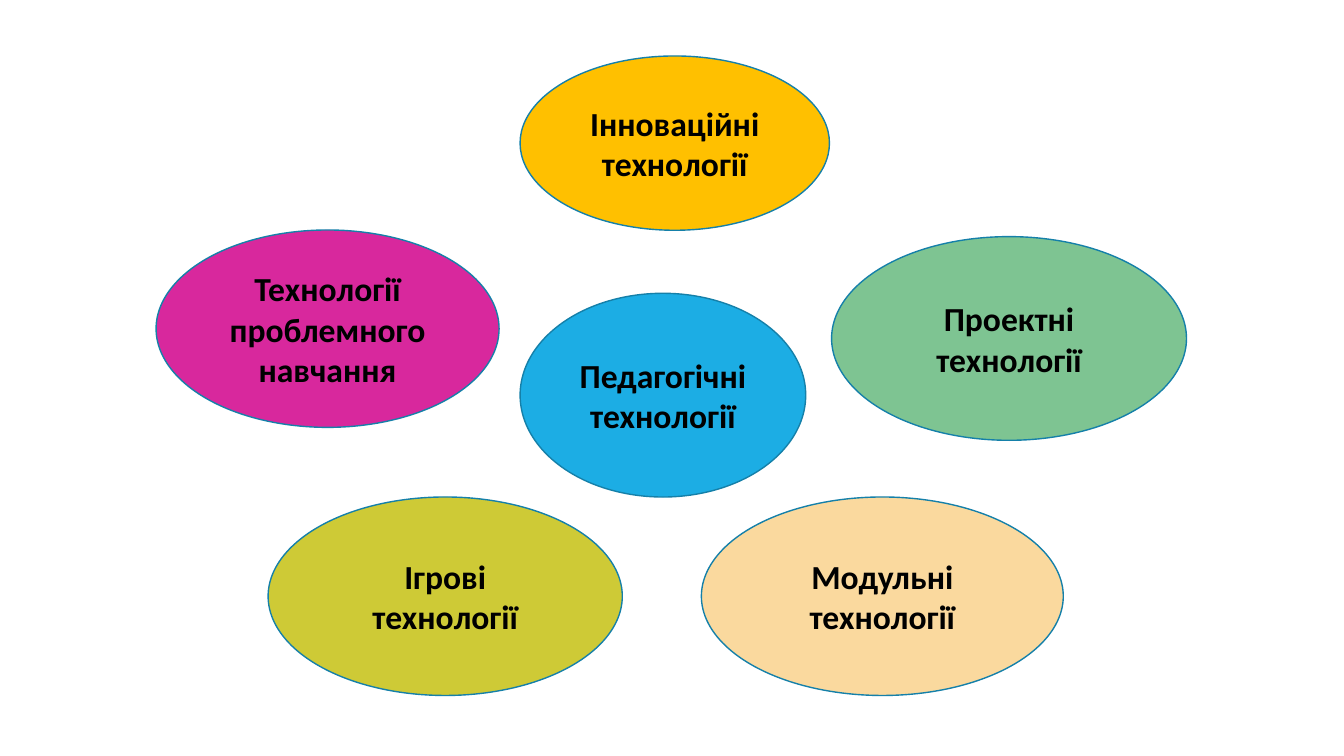
from dataclasses import dataclass

import pptx
import pptx.dml.color
import pptx.enum.shapes
import pptx.enum.text
import pptx.shapes.autoshape
import pptx.slide
import pptx.text.text
import pptx.util


@dataclass(frozen=True)
class Theme:
    font: str = "Calibri"
    text_size: float = 24
    line_width: float = 1
    text: str = "000000"
    outline: str = "1580A9"
    blue: str = "1CADE4"
    amber: str = "FFC000"
    magenta: str = "D8289D"
    green: str = "7EC492"
    olive: str = "CECA36"
    peach: str = "FAD99E"


@dataclass(frozen=True)
class Technology:
    name: str
    fill: str
    left: float
    top: float
    width: float
    height: float


THEME = Theme()
CENTRE_LEFT = 371.5
BOTTOM_ROW_TOP = 355
BOTTOM_ROW_HEIGHT = 141.8

TECHNOLOGIES = [
    Technology("Педагогічні технології", THEME.blue, CENTRE_LEFT, 209.5, 204, 145.5),
    Technology("Інноваційні технології", THEME.amber, CENTRE_LEFT, 40, 221, 124.5),
    Technology("Технології проблемного навчання", THEME.magenta, 111.5, 164.3, 245, 141),
    Technology("Проектні технології", THEME.green, 594, 169, 253.5, 145.5),
    Technology("Ігрові технології", THEME.olive, 191.5, BOTTOM_ROW_TOP, 253, BOTTOM_ROW_HEIGHT),
    Technology("Модульні технології", THEME.peach, 501, BOTTOM_ROW_TOP, 258.5, BOTTOM_ROW_HEIGHT),
]


def color(value: str) -> pptx.dml.color.RGBColor:
    return pptx.dml.color.RGBColor.from_string(value)


def write_text(
    frame: pptx.text.text.TextFrame,
    text: str,
    *,
    size: float = THEME.text_size,
    fill: str = THEME.text,
    bold: bool = True,
) -> None:
    frame.word_wrap = True
    frame.vertical_anchor = pptx.enum.text.MSO_ANCHOR.MIDDLE
    paragraph = frame.paragraphs[0]
    paragraph.alignment = pptx.enum.text.PP_ALIGN.CENTER
    run = paragraph.add_run()
    run.text = text
    run.font.name = THEME.font
    run.font.size = pptx.util.Pt(size)
    run.font.bold = bold
    run.font.color.rgb = color(fill)


def draw_technology(
    slide: pptx.slide.Slide, technology: Technology
) -> pptx.shapes.autoshape.Shape:
    shape = slide.shapes.add_shape(
        pptx.enum.shapes.MSO_SHAPE.OVAL,
        pptx.util.Pt(technology.left),
        pptx.util.Pt(technology.top),
        pptx.util.Pt(technology.width),
        pptx.util.Pt(technology.height),
    )
    shape.shadow.inherit = False
    shape.fill.solid()
    shape.fill.fore_color.rgb = color(technology.fill)
    shape.line.color.rgb = color(THEME.outline)
    shape.line.width = pptx.util.Pt(THEME.line_width)
    write_text(shape.text_frame, technology.name)
    return shape


def main() -> None:
    presentation = pptx.Presentation()
    presentation.slide_width = pptx.util.Pt(960)
    presentation.slide_height = pptx.util.Pt(540)
    slide = presentation.slides.add_slide(presentation.slide_layouts[6])
    for technology in TECHNOLOGIES:
        draw_technology(slide, technology)
    presentation.save("out.pptx")


if __name__ == "__main__":
    main()
